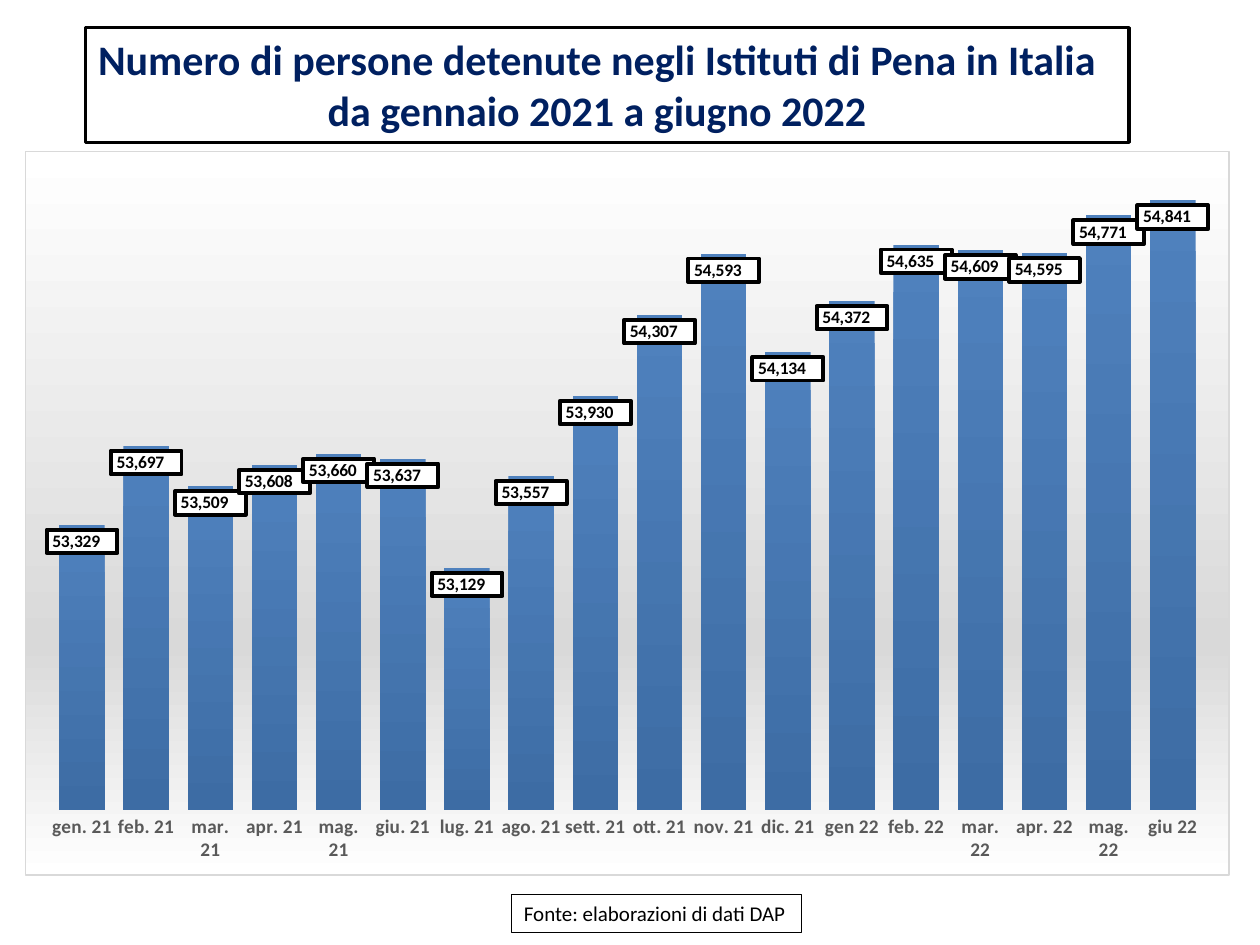
from lxml import etree
from pptx import Presentation
from pptx import util as u
from pptx.chart import data as cd
from pptx.dml.color import RGBColor
from pptx.enum import chart as ch, shapes, text
from pptx.oxml import ns

HUES = {"white": "FFFFFF", "black": "000000", "navy": "002060", "gray": "595959",
        "pale": "D9D9D9", "blue": "4F81BD", "deep": "3D6CA4"}
FONT = "Calibri"
FORM = '_-* #,##0\\ _€_-;\\-* #,##0\\ _€_-;_-* "-"?'


def style(font, size, hue, bold=False):
    font.name, font.size, font.bold = FONT, u.Pt(size), bold
    font.color.rgb = RGBColor.from_string(HUES[hue])


def paint(stops, edge=None, width=0):
    """Chart shape properties: a solid or a downward gradient, with an edge."""
    tint = '<a:srgbClr val="{}"/>'
    if len(stops) == 1:
        fill = f"<a:solidFill>{tint.format(HUES[stops[0][1]])}</a:solidFill>"
    else:
        marks = "".join(f'<a:gs pos="{pos * 1000}">{tint.format(HUES[hue])}</a:gs>'
                        for pos, hue in stops)
        fill = (f'<a:gradFill><a:gsLst>{marks}</a:gsLst>'
                '<a:lin ang="5400000" scaled="0"/></a:gradFill>')
    line = "<a:ln><a:noFill/></a:ln>"
    if edge:
        line = (f'<a:ln w="{int(u.Pt(width))}"><a:solidFill>{tint.format(HUES[edge])}'
                '</a:solidFill></a:ln>')
    return etree.fromstring(f'<c:spPr {ns.nsdecls("c", "a")}>{fill}{line}</c:spPr>')


deck = Presentation()
deck.slide_width, deck.slide_height = u.Inches(10), u.Inches(7.5)
slide = deck.slides.add_slide(deck.slide_layouts[6])

# Title and source boxes
left, mid = text.PP_ALIGN.LEFT, text.PP_ALIGN.CENTER
boxes = [
    ((0.68, 0.22, 8.28, 0.91), 2, 24, "navy", True,
     [("Numero di persone detenute negli Istituti di Pena in Italia", left),
      ("da gennaio 2021 a giugno 2022", mid)]),
    ((4.06, 7.1, 2.3, 0.3), 0.75, 12, "black", False,
     [("Fonte: elaborazioni di dati DAP", left)]),
]
for place, edge, size, hue, bold, lines in boxes:
    box = slide.shapes.add_shape(shapes.MSO_SHAPE.RECTANGLE, *map(u.Inches, place))
    box.shadow.inherit = False
    box.fill.solid()
    box.fill.fore_color.rgb = RGBColor.from_string(HUES["white"])
    box.line.color.rgb = RGBColor.from_string(HUES["black"])
    box.line.width = u.Pt(edge)
    frame = box.text_frame
    frame.word_wrap = False
    frame.auto_size = text.MSO_AUTO_SIZE.SHAPE_TO_FIT_TEXT
    frame.vertical_anchor = text.MSO_ANCHOR.TOP
    for i, (words, align) in enumerate(lines):
        para = frame.add_paragraph() if i else frame.paragraphs[0]
        para.alignment = align
        run = para.add_run()
        run.text = words
        style(run.font, size, hue, bold)

# Monthly figures
months = ["gen. 21", "feb. 21", "mar. 21", "apr. 21", "mag. 21", "giu. 21",
          "lug. 21", "ago. 21", "sett. 21", "ott. 21", "nov. 21", "dic. 21",
          "gen 22", "feb. 22", "mar. 22", "apr. 22", "mag. 22", "giu 22"]
counts = [53329, 53697, 53509, 53608, 53660, 53637, 53129, 53557, 53930,
          54307, 54593, 54134, 54372, 54635, 54609, 54595, 54771, 54841]
data = cd.CategoryChartData(number_format=FORM)
data.categories = months
data.add_series("Series 1", counts)
chart = slide.shapes.add_chart(
    ch.XL_CHART_TYPE.COLUMN_CLUSTERED,
    *map(u.Inches, (0.2, 1.2, 9.56, 5.75)), data).chart
chart.has_legend = chart.has_title = False
style(chart.font, 10, "black")

# Axes
cat, val = chart.category_axis, chart.value_axis
cat.major_tick_mark = cat.minor_tick_mark = ch.XL_TICK_MARK.NONE
cat.format.line.fill.background()
style(cat.tick_labels.font, 11, "gray", True)
val.minimum_scale, val.maximum_scale = 52000, 55000
val.has_major_gridlines = False
val.visible = False

# Columns
plot = chart.plots[0]
plot.gap_width = 41
plot.vary_by_categories = False
bars = plot.series[0]
bars.invert_if_negative = False
bars.format.fill.solid()
old = bars._element.find(ns.qn("c:spPr"))
old.getparent().replace(old, paint([(0, "blue"), (100, "deep")]))

# Boxed value labels
tags = bars.data_labels
tags.show_value = True
tags.position = ch.XL_LABEL_POSITION.INSIDE_END
tags.number_format, tags.number_format_is_linked = FORM, False
style(tags.font, 10, "black", True)
tags._element.find(ns.qn("c:txPr")).addprevious(paint([(0, "white")], "black", 2.25))

# Chart background and plot place
root = chart._chartSpace.find(ns.qn("c:chart"))
root.addnext(paint([(0, "white"), (68, "pale"), (100, "white")], "pale", 0.75))
area = root.find(ns.qn("c:plotArea"))
for node in area.findall(ns.qn("c:layout")):
    area.remove(node)
grid = etree.Element(ns.qn("c:layout"))
area.insert(0, grid)
hold = etree.SubElement(grid, ns.qn("c:manualLayout"))
for tag, value in [("layoutTarget", "inner"), ("xMode", "edge"), ("yMode", "edge"),
                   ("x", 0.02), ("y", 0.02), ("w", 0.96), ("h", 0.89)]:
    etree.SubElement(hold, ns.qn("c:" + tag)).set("val", str(value))

deck.save("out.pptx")
